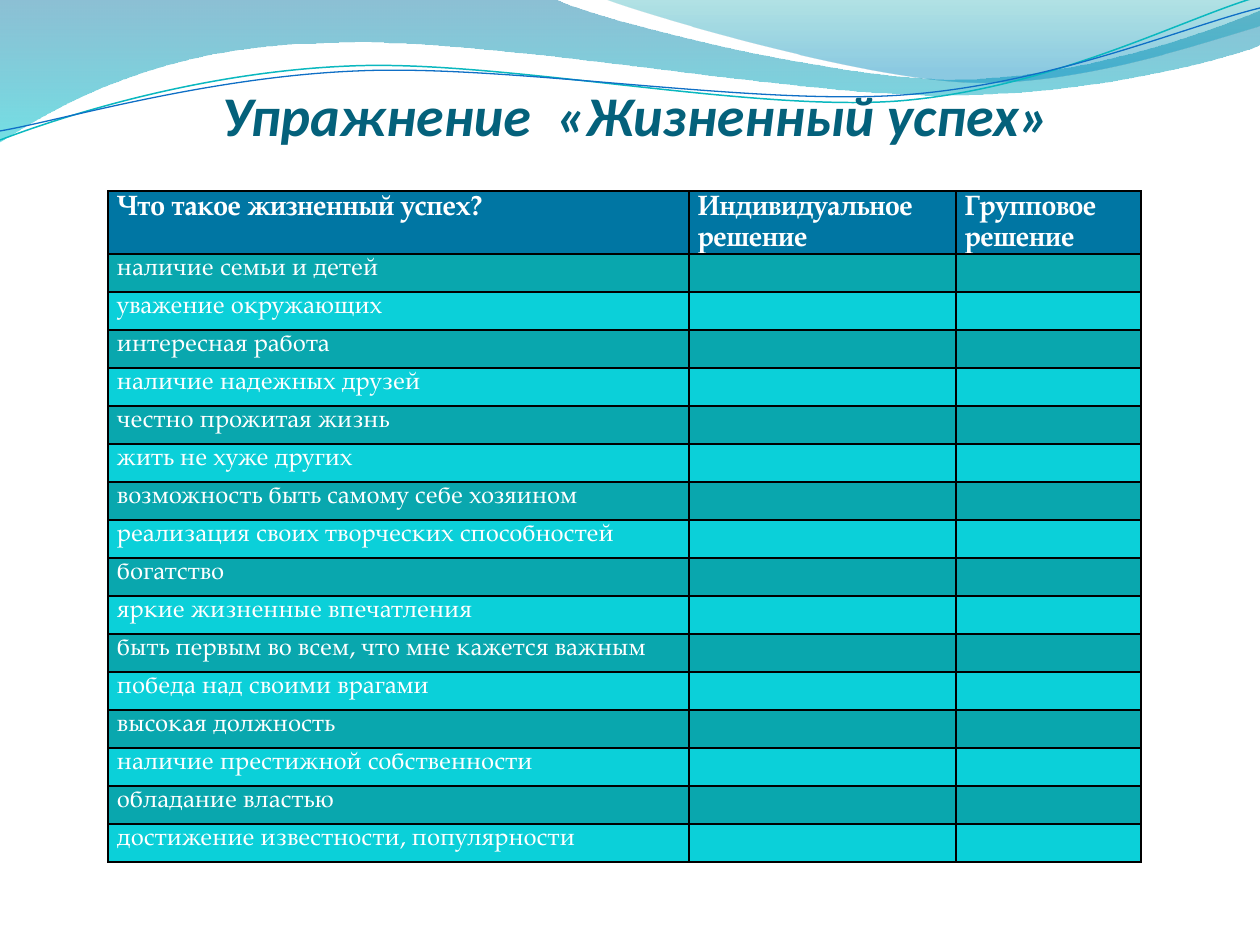
from dataclasses import dataclass
from typing import Any, Optional

import pptx
import pptx.dml.color
import pptx.enum.text
import pptx.oxml
import pptx.oxml.ns
import pptx.util
from lxml import etree

EMU_PER_PX = 914400 // 126

Point = tuple[int, int]
Segment = tuple[Point, ...]  # one point: straight line; three points: cubic curve


@dataclass(frozen=True)
class Theme:
    title_font: str = "Calibri"
    body_font: str = "TeX Gyre Pagella"
    title_size: int = 32
    header_size: int = 16
    body_size: int = 14
    title: str = "04617B"
    table_text: str = "FFFFFF"
    header_fill: str = "0076A3"
    bands: tuple[str, str] = ("09A7AE", "0BD0D9")
    border: str = "000000"


@dataclass(frozen=True)
class GradientStop:
    position: float
    color: str
    opacity: int


@dataclass(frozen=True)
class Wave:
    start: Point
    segments: tuple[Segment, ...]
    stops: tuple[GradientStop, ...] = ()
    line_color: Optional[str] = None
    line_width: float = 0


THEME = Theme()
WAVES = (
    Wave((0, 0), (
        ((554, -1),),
        ((600, 21), (837, 79), (955, 79)),
        ((1074, 79), (1207, 33), (1260, 11)),
        ((1261, 45),),
        ((1239, 55), (1096, 96), (940, 95)),
        ((783, 95), (481, 35), (324, 43)),
        ((163, 45), (58, 105), (-1, 142)),
        ((0, 0),),
    ), stops=(GradientStop(0, "0074A1", 45), GradientStop(1, "00C6CF", 55))),
    Wave((604, -1), (
        ((641, 14), (859, 78), (969, 82)),
        ((1079, 86), (1211, 40), (1260, 26)),
        ((1260, 0),),
        ((604, -1),),
    ), stops=(GradientStop(0, "00A1A9", 30), GradientStop(0.8, "008BBF", 45))),
    Wave((0, 140), (
        ((60, 117), (199, 72), (349, 66)),
        ((498, 59), (747, 112), (898, 101)),
        ((1050, 89), (1182, 19), (1257, -3)),
    ), line_color="0AB8BF", line_width=0.85),
    Wave((0, 131), (
        ((59, 121), (207, 77), (357, 71)),
        ((508, 64), (752, 106), (903, 95)),
        ((1053, 84), (1186, 26), (1260, 8)),
    ), line_color="0F6FC6", line_width=0.75),
)
TITLE = "Упражнение  «Жизненный успех»"
HEADERS = ("Что такое жизненный успех?", "Индивидуальное решение", "Групповое решение")
COLUMN_WIDTHS = (581, 267, 185)
HEADER_HEIGHT, ROW_HEIGHT = 63, 38
VALUES = (
    "наличие семьи и детей",
    "уважение окружающих",
    "интересная работа",
    "наличие надежных друзей",
    "честно прожитая жизнь",
    "жить не хуже других",
    "возможность быть самому себе хозяином",
    "реализация своих творческих способностей",
    "богатство",
    "яркие жизненные впечатления",
    "быть первым во всем, что мне кажется важным",
    "победа над своими врагами",
    "высокая должность",
    "наличие престижной собственности",
    "обладание властью",
    "достижение известности, популярности",
)
HEADER_SPACING = {"line_spacing": pptx.util.Pt(18)}
BODY_SPACING = {"line_spacing": 1.15, "space_before": pptx.util.Pt(5),
                "space_after": pptx.util.Pt(5)}


def px(length: int) -> pptx.util.Emu:
    return pptx.util.Emu(length * EMU_PER_PX)


def rgb(color: str) -> pptx.dml.color.RGBColor:
    return pptx.dml.color.RGBColor.from_string(color)


def apply_format(target: Any, values: dict[str, Any]) -> None:
    for name, value in values.items():
        setattr(target, name, value)


def add_span(para: Any, text: str, color: str, **font: Any) -> None:
    span = para.add_run()
    span.text = text
    apply_format(span.font, font)
    span.font.color.rgb = rgb(color)


def bend_curves(shape: Any, segments: tuple[Segment, ...]) -> None:
    """Join the straight steps between control points into cubic curves."""
    steps = iter(shape.element.spPr.findall(".//" + pptx.oxml.ns.qn("a:lnTo")))
    for segment in segments:
        group = [next(steps) for _ in segment]
        if len(group) == 3:
            curve = etree.Element(pptx.oxml.ns.qn("a:cubicBezTo"))
            group[0].addprevious(curve)
            for step in group:
                curve.append(step[0])
                step.getparent().remove(step)


def add_wave(page: Any, wave: Wave) -> None:
    builder = page.shapes.build_freeform(*map(px, wave.start))
    points = [(px(x), px(y)) for segment in wave.segments for x, y in segment]
    builder.add_line_segments(points, close=bool(wave.stops))
    shape = builder.convert_to_shape()
    bend_curves(shape, wave.segments)
    shape.shadow.inherit = False
    if wave.stops:
        shape.line.fill.background()
        shape.fill.gradient()
        shape.fill.gradient_angle = 270
        for stop, wanted in zip(shape.fill.gradient_stops, wave.stops):
            stop.position = wanted.position
            stop.color.rgb = rgb(wanted.color)
        colors = shape.element.spPr.findall(".//" + pptx.oxml.ns.qn("a:srgbClr"))
        for color, wanted in zip(colors, wave.stops):
            etree.SubElement(color, pptx.oxml.ns.qn("a:alpha"), val=str(wanted.opacity * 1000))
    else:
        shape.fill.background()
        shape.line.color.rgb = rgb(wave.line_color)
        shape.line.width = pptx.util.Pt(wave.line_width)


def add_title(page: Any) -> None:
    box = page.shapes.add_textbox(px(69), px(69), px(1134), px(79))
    apply_format(box.text_frame, {
        "word_wrap": True, "vertical_anchor": pptx.enum.text.MSO_ANCHOR.BOTTOM,
        "margin_left": 0, "margin_right": 0, "margin_top": px(6), "margin_bottom": 0})
    para = box.text_frame.paragraphs[0]
    para.alignment = pptx.enum.text.PP_ALIGN.CENTER
    add_span(para, TITLE, THEME.title, name=THEME.title_font,
             size=pptx.util.Pt(THEME.title_size), bold=True, italic=True)


def add_borders(cell: Any) -> None:
    properties = cell._tc.get_or_add_tcPr()
    for index, side in enumerate(("lnL", "lnR", "lnT", "lnB")):
        properties.insert(index, pptx.oxml.parse_xml(
            f'<a:{side} {pptx.oxml.ns.nsdecls("a")} w="12700"><a:solidFill>'
            f'<a:srgbClr val="{THEME.border}"/></a:solidFill></a:{side}>'))


def fill_cell(cell: Any, text: str, fill: str, header: bool) -> None:
    apply_format(cell, {"margin_left": px(9), "margin_right": px(9),
                        "margin_top": 0, "margin_bottom": 0})
    cell.fill.solid()
    cell.fill.fore_color.rgb = rgb(fill)
    add_borders(cell)
    para = cell.text_frame.paragraphs[0]
    size = THEME.header_size if header else THEME.body_size
    if not text:
        etree.SubElement(para._p, pptx.oxml.ns.qn("a:endParaRPr"), sz=str(size * 100))
        return
    apply_format(para, HEADER_SPACING if header else BODY_SPACING)
    if not header:
        indent = px(48)
        para._p.get_or_add_pPr().set("marL", str(indent))
        para._p.get_or_add_pPr().set("indent", str(-indent))
    add_span(para, text, THEME.table_text, name=THEME.body_font,
             size=pptx.util.Pt(size), bold=header)


def add_success_table(page: Any) -> None:
    rows = [HEADERS] + [(value, "", "") for value in VALUES]
    height = HEADER_HEIGHT + ROW_HEIGHT * len(VALUES)
    table = page.shapes.add_table(len(rows), len(HEADERS), px(108), px(191),
                                  px(sum(COLUMN_WIDTHS)), px(height)).table
    apply_format(table, {"first_row": False, "horz_banding": False})
    for column, width in zip(table.columns, COLUMN_WIDTHS):
        column.width = px(width)
    for index, texts in enumerate(rows):
        header = index == 0
        table.rows[index].height = px(HEADER_HEIGHT if header else ROW_HEIGHT)
        fill = THEME.header_fill if header else THEME.bands[(index - 1) % 2]
        for column, text in enumerate(texts):
            fill_cell(table.cell(index, column), text, fill, header)


def main() -> None:
    deck = pptx.Presentation()
    apply_format(deck, {"slide_width": px(1260), "slide_height": px(945)})
    page = deck.slides.add_slide(deck.slide_layouts[6])
    for wave in WAVES:
        add_wave(page, wave)
    add_title(page)
    add_success_table(page)
    deck.save("out.pptx")


if __name__ == "__main__":
    main()
